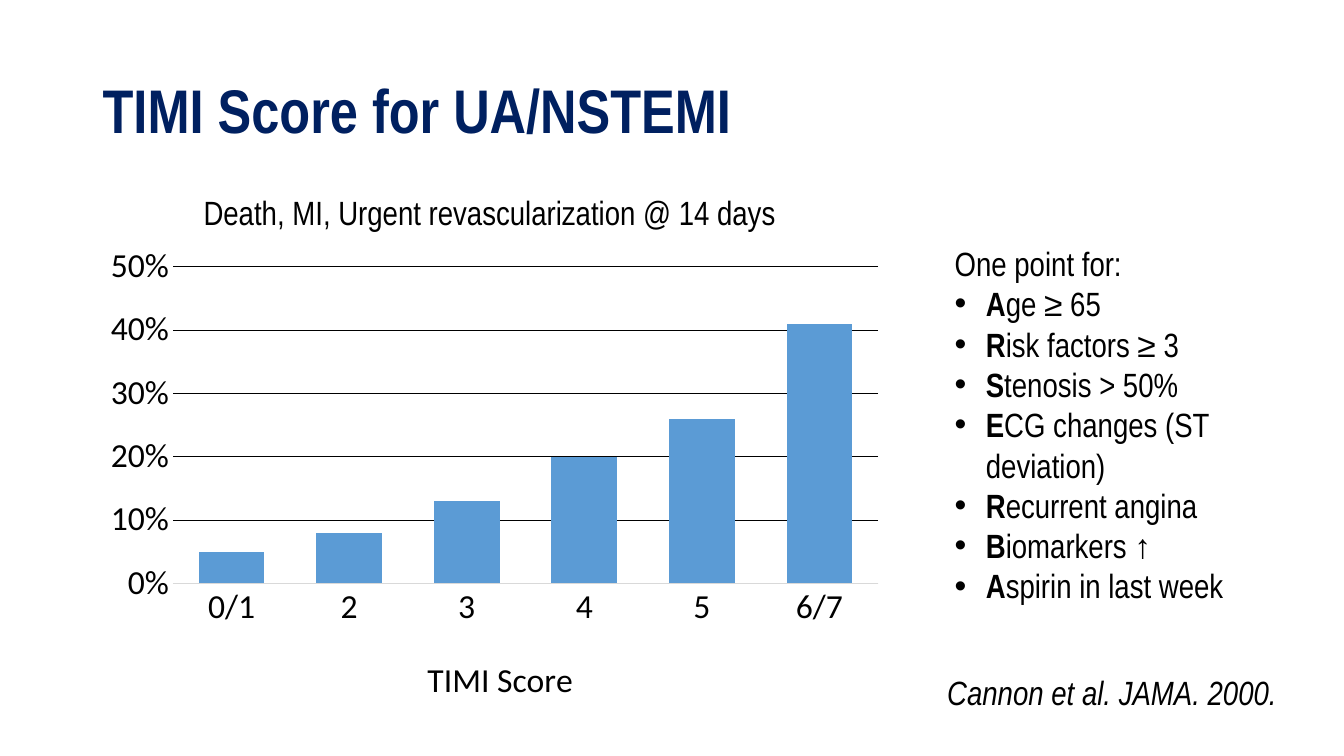
from dataclasses import dataclass

from lxml.etree import SubElement
from pptx import Presentation
from pptx.chart.data import CategoryChartData
from pptx.dml.color import RGBColor as RGB
from pptx.enum.chart import XL_CHART_TYPE as ChartType, XL_TICK_MARK as Tick
from pptx.enum.text import MSO_ANCHOR as Anchor, MSO_AUTO_SIZE as AutoSize, PP_ALIGN as Align
from pptx.oxml import parse_xml
from pptx.oxml.ns import nsdecls, qn
from pptx.util import Inches, Pt


@dataclass(frozen=True)
class Theme:
    text_font: str = "Arial Narrow"
    chart_font: str = "Calibri"
    title_size: int = 44
    body_size: int = 24
    navy: RGB = RGB(0x00, 0x20, 0x60)
    black: RGB = RGB(0, 0, 0)
    bar_blue: RGB = RGB(0x5B, 0x9B, 0xD5)
    axis_gray: RGB = RGB(0xD9, 0xD9, 0xD9)


EVENT_RATES = {"0/1": 0.05, "2": 0.08, "3": 0.13, "4": 0.2, "5": 0.26, "6/7": 0.41}
CRITERIA = [
    "Age ≥ 65",
    "Risk factors ≥ 3",
    "Stenosis > 50%",
    "ECG changes (ST deviation)",
    "Recurrent angina",
    "Biomarkers ↑",
    "Aspirin in last week",
]


def place(parent, index, **fractions):
    """Give a chart part a manual layout in fractions of the chart's size."""
    for old in parent.findall(qn("c:layout")):
        parent.remove(old)
    layout = parse_xml(f"<c:layout {nsdecls('c')}><c:manualLayout/></c:layout>")
    manual = layout[0]
    if "w" in fractions:
        SubElement(manual, qn("c:layoutTarget")).set("val", "inner")
    for mode in ("xMode", "yMode"):
        SubElement(manual, qn(f"c:{mode}")).set("val", "edge")
    for key, value in fractions.items():
        SubElement(manual, qn(f"c:{key}")).set("val", str(value))
    parent.insert(index, layout)


class SlideBuilder:
    def __init__(self, slide, theme):
        self.slide = slide
        self.theme = theme

    def style(self, font, size=None, color=None, name=None, bold=False, italic=False):
        font.name = name or self.theme.text_font
        font.size = Pt(size or self.theme.body_size)
        font.color.rgb = color or self.theme.black
        font.bold = bold
        font.italic = italic

    def frame(self, box, wrap=True):
        frame = self.slide.shapes.add_textbox(*map(Inches, box)).text_frame
        frame.word_wrap = wrap
        return frame

    def title(self, text, box):
        frame = self.frame(box)
        frame.vertical_anchor = Anchor.MIDDLE
        frame.text = text
        heading = frame.paragraphs[0]
        heading.line_spacing = 0.9
        self.style(heading.runs[0].font, self.theme.title_size, self.theme.navy, bold=True)

    def label(self, text, box, align=Align.LEFT, italic=False):
        frame = self.frame(box, wrap=False)
        frame.auto_size = AutoSize.SHAPE_TO_FIT_TEXT
        frame.text = text
        frame.paragraphs[0].alignment = align
        self.style(frame.paragraphs[0].runs[0].font, italic=italic)

    def mnemonic_list(self, heading, items, box):
        """Write a heading and bullets whose first letters are bold."""
        frame = self.frame(box)
        frame.auto_size = AutoSize.SHAPE_TO_FIT_TEXT
        frame.text = heading
        self.style(frame.paragraphs[0].runs[0].font)
        for item in items:
            point = frame.add_paragraph()
            props = point._p.get_or_add_pPr()
            props.set("marL", str(Inches(0.31)))
            props.set("indent", str(Inches(-0.31)))
            SubElement(props, qn("a:buFont")).set("typeface", "Arial")
            SubElement(props, qn("a:buChar")).set("char", "•")
            point.text = item[0]
            point.add_run().text = item[1:]
            initial, rest = point.runs
            self.style(initial.font, bold=True)
            self.style(rest.font)

    def column_chart(self, rates, axis_title, box):
        theme = self.theme
        data = CategoryChartData(number_format="0%")
        data.categories = list(rates)
        data.add_series("Series 1", list(rates.values()))
        chart = self.slide.shapes.add_chart(
            ChartType.COLUMN_CLUSTERED, *map(Inches, box), data).chart
        chart.has_legend = False
        chart.has_title = False
        self.style(chart.font, name=theme.chart_font)

        plot = chart.plots[0]
        plot.gap_width, plot.overlap = 79, -27
        plot.vary_by_categories = False
        fill = plot.series[0].format.fill
        fill.solid()
        fill.fore_color.rgb = theme.bar_blue

        scores, percents = chart.category_axis, chart.value_axis
        for axis in (scores, percents):
            axis.major_tick_mark = axis.minor_tick_mark = Tick.NONE
            self.style(axis.tick_labels.font, name=theme.chart_font)
        scores.format.line.color.rgb = theme.axis_gray
        scores.format.line.width = Pt(0.75)
        scores.axis_title.text_frame.text = axis_title
        caption = scores.axis_title.text_frame.paragraphs[0].runs[0]
        self.style(caption.font, name=theme.chart_font)

        percents.minimum_scale, percents.maximum_scale, percents.major_unit = 0, 0.5, 0.1
        percents.tick_labels.number_format = "0%"
        percents.tick_labels.number_format_is_linked = False
        percents.format.line.fill.background()
        grid = percents.major_gridlines.format.line
        grid.color.rgb = theme.black
        grid.width = Pt(0.5)

        plot_area = chart._chartSpace.chart.plotArea
        place(plot_area, 0, x=0.1, y=0.06, w=0.88, h=0.66)
        place(scores.axis_title._element, 1, x=0.41, y=0.86)


def main():
    deck = Presentation()
    deck.slide_width, deck.slide_height = Inches(13.33), Inches(7.5)
    builder = SlideBuilder(deck.slides.add_slide(deck.slide_layouts[6]), Theme())
    builder.title("TIMI Score for UA/NSTEMI", (0.92, 0.4, 11.5, 1.45))
    builder.column_chart(EVENT_RATES, "TIMI Score", (0.92, 2.36, 7.95, 4.76))
    builder.label("Cannon et al. JAMA. 2000.", (9.25, 6.62, 3.51, 0.5), Align.RIGHT, italic=True)
    builder.mnemonic_list("One point for:", CRITERIA, (9.37, 2.36, 3.26, 3.74))
    builder.label("Death, MI, Urgent revascularization @ 14 days", (1.92, 1.85, 5.95, 0.5))
    deck.save("out.pptx")


if __name__ == "__main__":
    main()
